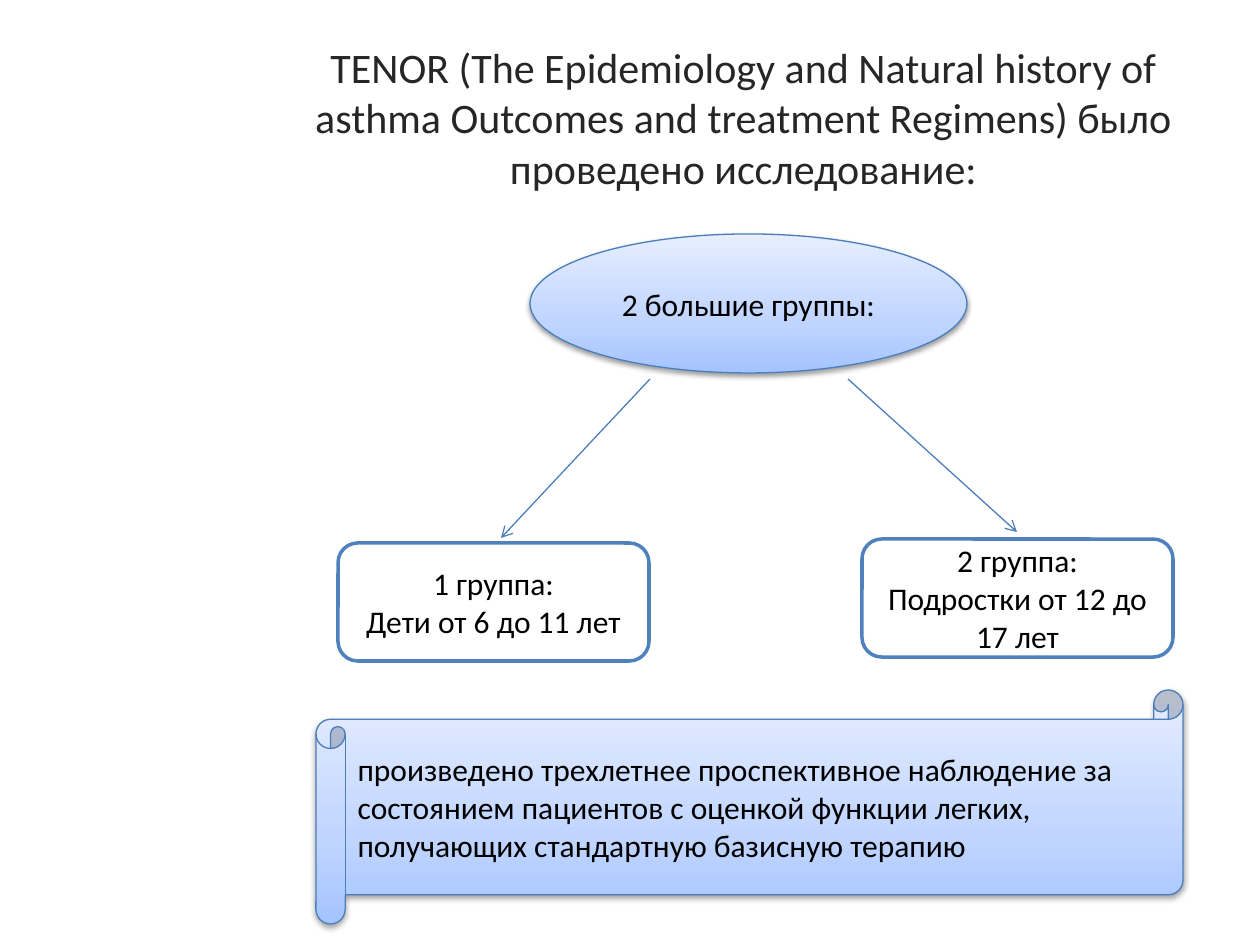
from dataclasses import dataclass

from lxml import etree
from pptx import Presentation
from pptx.dml.color import RGBColor
from pptx.enum.shapes import MSO_CONNECTOR, MSO_SHAPE
from pptx.enum.text import MSO_ANCHOR, PP_ALIGN
from pptx.oxml.ns import qn
from pptx.util import Pt

OVAL = MSO_SHAPE.OVAL
ROUND = MSO_SHAPE.ROUNDED_RECTANGLE
SCROLL = MSO_SHAPE.HORIZONTAL_SCROLL
STRAIGHT = MSO_CONNECTOR.STRAIGHT
MIDDLE = MSO_ANCHOR.MIDDLE
LEFT, CENTER = PP_ALIGN.LEFT, PP_ALIGN.CENTER

SCALE = 914400 / 126
FONT = "Calibri"
COLORS = {
    "title": "262626",
    "text": "000000",
    "white": "FFFFFF",
    "edge": "4F81BD",
    "thin": "4B7EBC",
    "shadow": "000000",
    "deep": "A4C4FF",
    "mid": "BFD4FF",
    "pale": "E6EEFF",
}
STOPS = ((0, "deep"), (35, "mid"), (100, "pale"))


@dataclass
class Node:
    kind: MSO_SHAPE
    box: tuple[int, int, int, int]
    text: str
    glossy: bool = False
    align: PP_ALIGN = CENTER


@dataclass
class Arrow:
    start: tuple[int, int]
    end: tuple[int, int]


TITLE = ("TENOR (The Epidemiology and Natural history of asthma Outcomes "
         "and treatment Regimens) было проведено исследование:")
TITLE_BOX = (266, 38, 955, 158)
NODES = [
    Node(OVAL, (530, 234, 437, 139), "2 большие группы:", True),
    Node(ROUND, (338, 543, 311, 118), "1 группа:\nДети от 6 до 11 лет"),
    Node(ROUND, (862, 539, 311, 118), "2 группа:\nПодростки от 12 до 17 лет"),
    Node(SCROLL, (316, 690, 867, 234),
         "произведено трехлетнее проспективное наблюдение за состоянием "
         "пациентов с оценкой функции легких, получающих стандартную "
         "базисную терапию", True, LEFT),
]
ARROWS = [Arrow((650, 379), (501, 538)), Arrow((848, 379), (1017, 532))]


def emu(*sizes: int) -> list[int]:
    return [round(size * SCALE) for size in sizes]


def color(name: str) -> RGBColor:
    return RGBColor.from_string(COLORS[name])


def add_tag(parent, tag: str, **attrs: str):
    return etree.SubElement(parent, qn(tag), attrs)


def set_text(shape, text: str, size: int, ink: str, align: PP_ALIGN) -> None:
    frame = shape.text_frame
    frame.word_wrap = True
    frame.vertical_anchor = MIDDLE
    frame.text = text
    for para in frame.paragraphs:
        para.alignment = align
        for run in para.runs:
            run.font.name = FONT
            run.font.size = Pt(size)
            run.font.color.rgb = color(ink)


def set_line(line, ink: str, width: float) -> None:
    line.color.rgb = color(ink)
    line.width = Pt(width)


def add_gloss(shape) -> None:
    shape.fill.gradient()
    shape.fill.gradient_angle = 90
    props = shape.element.spPr
    stops = props.find(".//" + qn("a:gsLst"))
    for stop in list(stops):
        stops.remove(stop)
    for place, name in STOPS:
        stop = add_tag(stops, "a:gs", pos=str(place * 1000))
        add_tag(stop, "a:srgbClr", val=COLORS[name])
    shadow = add_tag(props.find(qn("a:effectLst")), "a:outerShdw",
                     blurRad="40000", dist="20000", dir="5400000",
                     rotWithShape="0")
    tint = add_tag(shadow, "a:srgbClr", val=COLORS["shadow"])
    add_tag(tint, "a:alpha", val="38000")


def add_node(slide, node: Node) -> None:
    shape = slide.shapes.add_shape(node.kind, *emu(*node.box))
    shape.shadow.inherit = False
    if node.glossy:
        add_gloss(shape)
        set_line(shape.line, "thin", 0.75)
    else:
        shape.fill.solid()
        shape.fill.fore_color.rgb = color("white")
        set_line(shape.line, "edge", 2)
    set_text(shape, node.text, 18, "text", node.align)


def add_arrow(slide, arrow: Arrow) -> None:
    link = slide.shapes.add_connector(STRAIGHT, *emu(*arrow.start, *arrow.end))
    set_line(link.line, "thin", 0.75)
    props = link.element.spPr
    add_tag(props.find(qn("a:ln")), "a:tailEnd", type="arrow")
    add_tag(props, "a:effectLst")


def main() -> None:
    deck = Presentation()
    deck.slide_width, deck.slide_height = emu(1260, 945)
    slide = deck.slides.add_slide(deck.slide_layouts[6])
    title = slide.shapes.add_textbox(*emu(*TITLE_BOX))
    set_text(title, TITLE, 24, "title", CENTER)
    for node in NODES:
        add_node(slide, node)
    for arrow in ARROWS:
        add_arrow(slide, arrow)
    deck.save("out.pptx")


if __name__ == "__main__":
    main()
